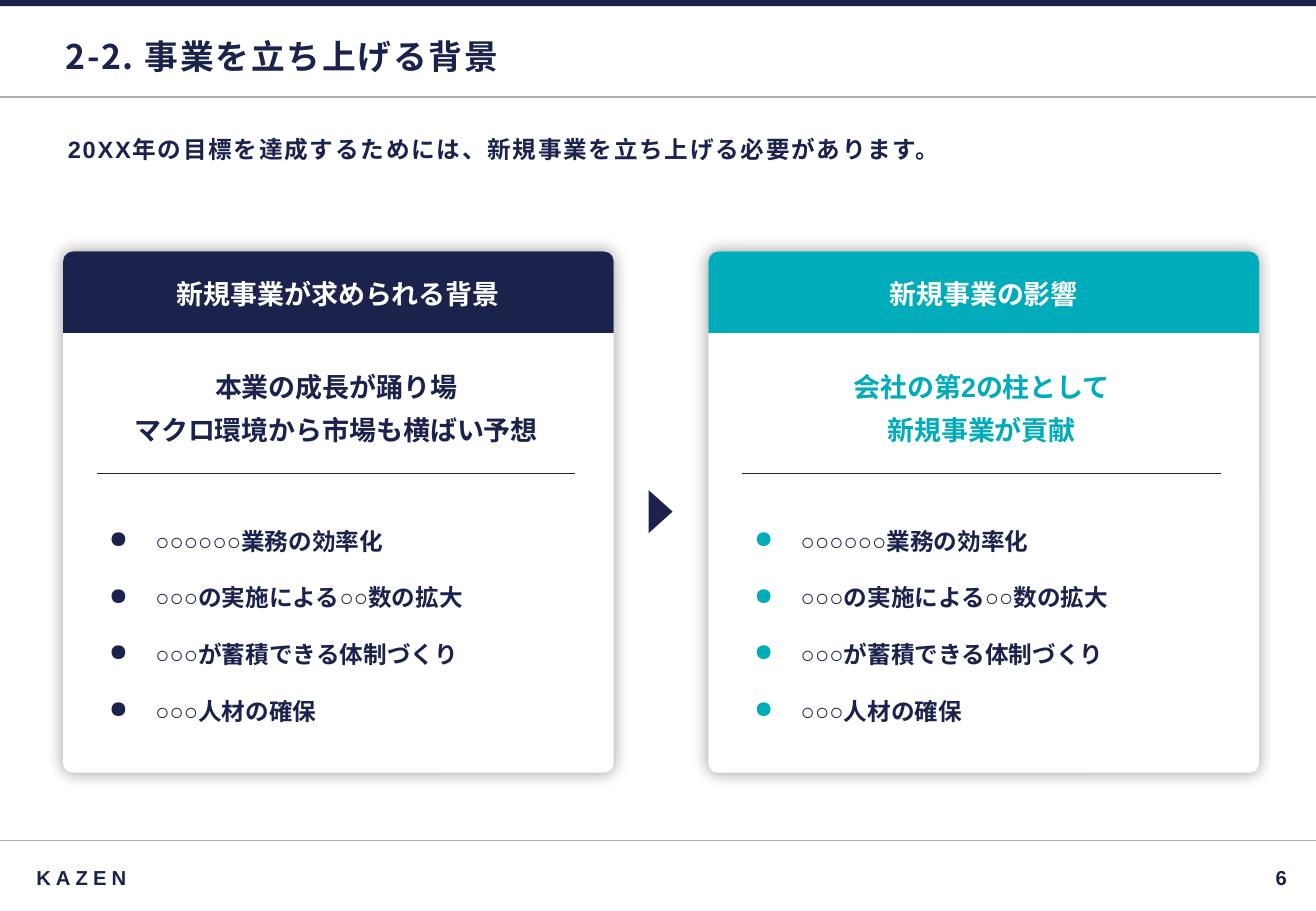
from lxml import etree
from pptx import Presentation
from pptx.dml.color import RGBColor
from pptx.enum.shapes import MSO_CONNECTOR, MSO_SHAPE as SHAPE
from pptx.enum.text import MSO_ANCHOR as ANCHOR, PP_ALIGN as ALIGN
from pptx.oxml.ns import qn
from pptx.util import Cm, Pt

NAVY = RGBColor(0x1B, 0x22, 0x4C)
TEAL = RGBColor(0x00, 0xAC, 0xBA)
GRAY = RGBColor(0xAF, 0xAF, 0xAF)
WHITE = RGBColor(0xFF, 0xFF, 0xFF)
BLACK = RGBColor(0x00, 0x00, 0x00)

SLIDE_W, SLIDE_H = 27.51, 19.05
CARD_W, CARD_H, CARD_Y = 11.51, 10.9, 5.26
CARD_X = (1.32, 14.81)
HEADER_H = 1.7
INDENT = 0.97
POINTS = [
    "○○○○○○業務の効率化",
    "○○○の実施による○○数の拡大",
    "○○○が蓄積できる体制づくり",
    "○○○人材の確保",
]
CARDS = [
    ("新規事業が求められる背景", ["本業の成長が踊り場", "マクロ環境から市場も横ばい予想"], NAVY),
    ("新規事業の影響", ["会社の第2の柱として", "新規事業が貢献"], TEAL),
]


def set_attrs(obj, values):
    """Set each named attribute of an object."""
    for name, value in values.items():
        setattr(obj, name, value)


def add_color(parent, tag, color):
    """Add an element that holds an RGB colour and return the colour."""
    el = etree.SubElement(parent, qn(tag))
    return etree.SubElement(el, qn("a:srgbClr"), val=str(color))


def write(sp, lines, size, color, para=None, inset=(0.1, 0.1), anchor=ANCHOR.MIDDLE,
          font="Arial", spacing=0, bullet=None):
    """Fill a shape with formatted paragraphs."""
    tf = sp.text_frame
    dx, dy = map(Cm, inset)
    set_attrs(tf, dict(word_wrap=True, vertical_anchor=anchor, margin_left=dx,
                       margin_right=dx, margin_top=dy, margin_bottom=dy))
    for i, line in enumerate(lines):
        p = tf.add_paragraph() if i else tf.paragraphs[0]
        set_attrs(p, para or {})
        if bullet is not None:
            pPr = p._p.get_or_add_pPr()
            pPr.set("marL", str(Cm(INDENT)))
            pPr.set("indent", str(-Cm(INDENT)))
            add_color(pPr, "a:buClr", bullet)
            etree.SubElement(pPr, qn("a:buChar"), char="●")
        r = p.add_run()
        r.text = line
        set_attrs(r.font, dict(name=font, size=Pt(size), bold=True))
        r.font.color.rgb = color
        rPr = r._r.get_or_add_rPr()
        etree.SubElement(rPr, qn("a:ea"), typeface=font)
        if spacing:
            rPr.set("spc", str(spacing * 100))


def add_text(s, box, lines, size, color, **options):
    """Add a text box."""
    write(s.shapes.add_textbox(*map(Cm, box)), lines, size, color, **options)


def paint(sp, color):
    """Give a shape a plain fill without line or shadow."""
    sp.shadow.inherit = False
    sp.fill.solid()
    sp.fill.fore_color.rgb = color
    sp.line.fill.background()
    return sp


def add_block(s, kind, box, color):
    """Add a plain preset shape."""
    return paint(s.shapes.add_shape(kind, *map(Cm, box)), color)


def add_rule(s, x, y, w, color):
    """Add a thin horizontal line."""
    ln = s.shapes.add_connector(MSO_CONNECTOR.STRAIGHT, *map(Cm, (x, y, x + w, y)))
    ln.line.color.rgb = color
    ln.line.width = Pt(0.75)
    etree.SubElement(ln._element.spPr, qn("a:effectLst"))


def add_frame(s, w, h):
    """Draw the top bar, rules, footer name and page number."""
    add_rule(s, 0, h - 1.48, w, GRAY)
    add_rule(s, 0, 2.03, w, GRAY)
    add_block(s, SHAPE.RECTANGLE, (0, 0, w, 0.13), NAVY)
    add_text(s, (0.51, h - 1.09, 22, 0.79), ["KAZEN"], 12, NAVY,
             inset=(0.25, 0.13), spacing=3)
    add_text(s, (w - 4.5, h - 1.09, 3.99, 0.79), ["6"], 12, NAVY,
             para=dict(alignment=ALIGN.RIGHT))


def add_heading(s, x, y, w):
    """Draw the title and the lead sentence."""
    add_text(s, (x, y, w, 1.3), ["2-2. 事業を立ち上げる背景"], 20, NAVY,
             font="Noto Sans CJK JP", spacing=1)
    add_text(s, (x + 0.05, y + 2.19, w, 2.1),
             ["20XX年の目標を達成するためには、新規事業を立ち上げる必要があります。"],
             14, NAVY, anchor=ANCHOR.TOP, spacing=1)


def add_card(s, x, y, w, h, title, message, color):
    """Draw a shadowed card with header, message and bullet points."""
    card = add_block(s, SHAPE.ROUNDED_RECTANGLE, (x, y, w, h), WHITE)
    card.adjustments[0] = 0.018
    effects = card._element.spPr.find(qn("a:effectLst"))
    shadow = etree.SubElement(effects, qn("a:outerShdw"), blurRad=str(Pt(10)),
                              dist="0", dir="0", algn="ctr", rotWithShape="0")
    tint = etree.SubElement(shadow, qn("a:srgbClr"), val=str(BLACK))
    etree.SubElement(tint, qn("a:alpha"), val="40000")

    header = add_block(s, SHAPE.ROUND_2_SAME_RECTANGLE, (x, y, w, HEADER_H), color)
    header.adjustments[0] = 0.12
    write(header, [title], 16, WHITE, para=dict(alignment=ALIGN.CENTER), inset=(0.2, 0.2))

    left, inner = x + 0.71, w - 1.51
    add_text(s, (left, y + 2.28, inner, 2), message, 16, color,
             para=dict(alignment=ALIGN.CENTER, space_after=Pt(6)))
    add_rule(s, left, y + 4.64, inner, NAVY)
    add_text(s, (left, y + 5.03, inner, 5.3), POINTS, 14, NAVY, para=dict(line_spacing=2.0),
             inset=(0.25, 0.13), anchor=ANCHOR.TOP, bullet=color)


def add_pointer(s, x, y, w, h):
    """Draw the triangle that points from one card to the next."""
    fb = s.shapes.build_freeform(Cm(x), Cm(y))
    fb.add_line_segments([(Cm(x + w), Cm(y + h / 2)), (Cm(x), Cm(y + h))])
    paint(fb.convert_to_shape(), NAVY)


def main():
    """Build and save the slide."""
    prs = Presentation()
    set_attrs(prs, dict(slide_width=Cm(SLIDE_W), slide_height=Cm(SLIDE_H)))
    s = prs.slides.add_slide(prs.slide_layouts[6])
    add_frame(s, SLIDE_W, SLIDE_H)
    add_heading(s, 1.27, 0.53, 25)
    for x, card in zip(CARD_X, CARDS):
        add_card(s, x, CARD_Y, CARD_W, CARD_H, *card)
    add_pointer(s, 13.56, 10.25, 0.5, 0.9)
    prs.save("out.pptx")


if __name__ == "__main__":
    main()
